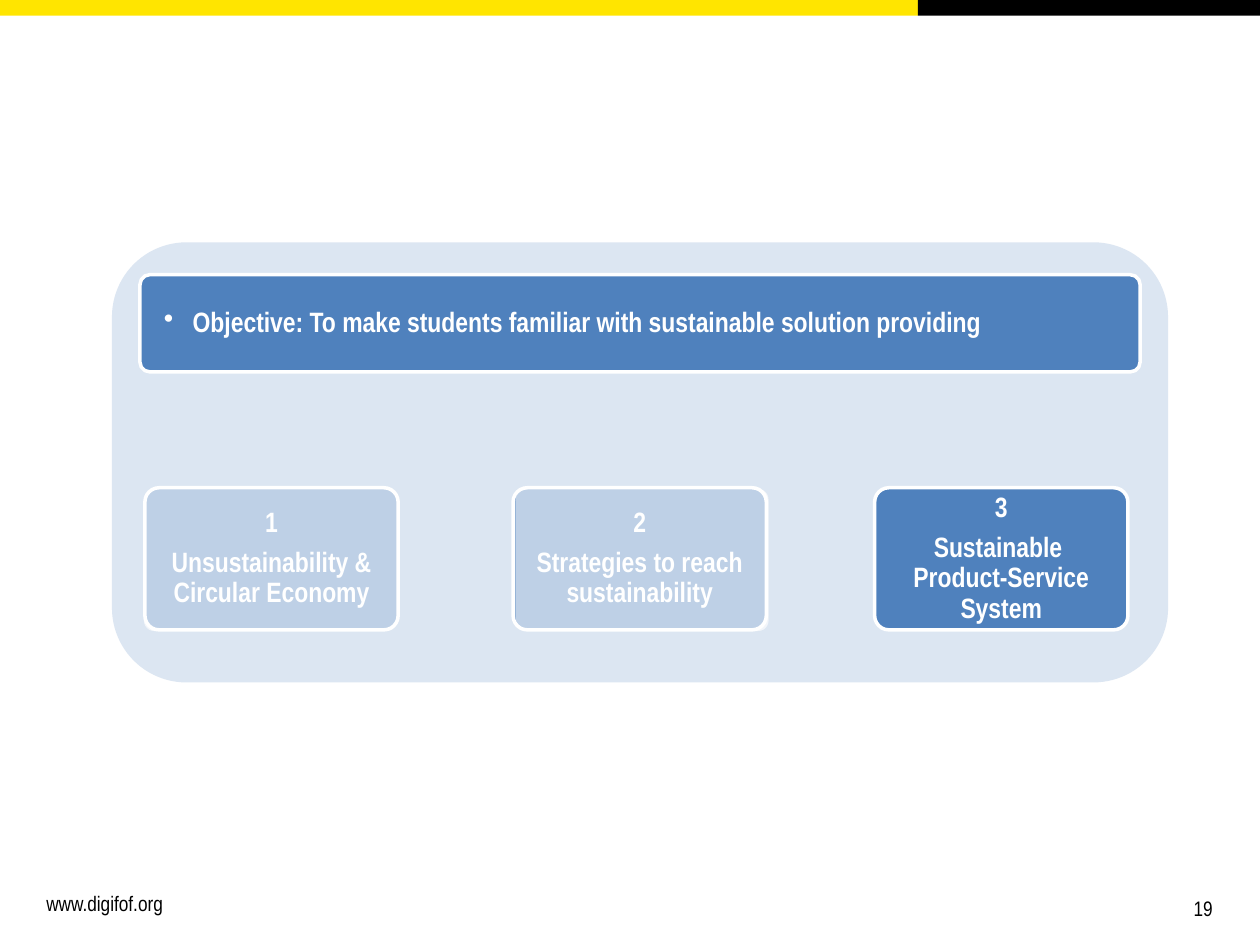
"""Build the course objective slide with its three topic cards."""
from dataclasses import dataclass

from lxml import etree
from pptx import Presentation
from pptx import util as u
from pptx.dml.color import RGBColor
from pptx.enum import shapes, text
from pptx.oxml import ns


@dataclass(frozen=True)
class Theme:
    font: str = "Arial Narrow"
    yellow: str = "FFE500"
    black: str = "000000"
    white: str = "FFFFFF"
    panel: str = "DCE6F2"
    blue: str = "4F81BD"
    body_size: float = 16
    footer_size: float = 12
    outline: float = 2
    veil_opacity: int = 63


class SlideBuilder:
    def __init__(self, slide, theme):
        self.slide = slide
        self.theme = theme

    def block(self, box, fill, line=None, radius=None, opacity=None):
        kinds = shapes.MSO_SHAPE
        kind = kinds.RECTANGLE if radius is None else kinds.ROUNDED_RECTANGLE
        shape = self.slide.shapes.add_shape(kind, *map(u.Pt, box))
        shape.shadow.inherit = False
        if radius is not None:
            shape.adjustments[0] = radius
        shape.fill.solid()
        shape.fill.fore_color.rgb = RGBColor.from_string(fill)
        if opacity is not None:
            color = shape._element.spPr.find(".//" + ns.qn("a:srgbClr"))
            etree.SubElement(color, ns.qn("a:alpha"), val=str(opacity * 1000))
        if line is None:
            shape.line.fill.background()
        else:
            shape.line.color.rgb = RGBColor.from_string(line)
            shape.line.width = u.Pt(self.theme.outline)
        return shape

    def run(self, paragraph, content, size, color, bold=False):
        run = paragraph.add_run()
        run.text = content
        run.font.name = self.theme.font
        run.font.size = u.Pt(size)
        run.font.bold = bold
        run.font.color.rgb = RGBColor.from_string(color)

    def body(self, shape, paragraphs, alignment, side_inset, bullet=False):
        frame = shape.text_frame
        frame.word_wrap = True
        frame.vertical_anchor = text.MSO_ANCHOR.MIDDLE
        frame.margin_left = frame.margin_right = u.Pt(side_inset)
        frame.margin_top = frame.margin_bottom = u.Pt(2)
        for index, lines in enumerate(paragraphs):
            paragraph = frame.add_paragraph() if index else frame.paragraphs[0]
            if bullet:
                self.bullet(paragraph)
            paragraph.alignment = alignment
            paragraph.line_spacing = 0.9
            paragraph.space_after = u.Pt(5.6)
            for number, line in enumerate(lines):
                if number:
                    paragraph.add_line_break()
                self.run(paragraph, line, self.theme.body_size, self.theme.white, True)

    def bullet(self, paragraph):
        properties = paragraph._p.get_or_add_pPr()
        indent = u.Pt(16.5)
        properties.set("marL", str(indent))
        properties.set("indent", str(-indent))
        etree.SubElement(properties, ns.qn("a:buChar"), char="•")

    def footer(self, box, content, alignment):
        frame = self.slide.shapes.add_textbox(*map(u.Pt, box)).text_frame
        frame.word_wrap = True
        frame.vertical_anchor = text.MSO_ANCHOR.BOTTOM
        paragraph = frame.paragraphs[0]
        paragraph.alignment = alignment
        self.run(paragraph, content, self.theme.footer_size, self.theme.black)

    def banner(self, box, content):
        shape = self.block(box, self.theme.blue, self.theme.white, 0.1)
        self.body(shape, [[content]], text.PP_ALIGN.LEFT, 12, bullet=True)

    def card(self, box, number, title_lines):
        shape = self.block(box, self.theme.blue, self.theme.white, 0.1)
        self.body(shape, [[number], title_lines], text.PP_ALIGN.CENTER, 3.5)

    def veil(self, box):
        self.block(box, self.theme.white, radius=0.074, opacity=self.theme.veil_opacity)


def main():
    theme = Theme()
    presentation = Presentation()
    presentation.slide_width, presentation.slide_height = u.Pt(720), u.Pt(540)
    slide = presentation.slides.add_slide(presentation.slide_layouts[6])
    builder = SlideBuilder(slide, theme)

    split, bar_height = 524.5, 9
    builder.block((0, 0, split, bar_height), theme.yellow)
    builder.block((split, 0, 720 - split, bar_height), theme.black)
    builder.footer((19.4, 491, 210, 36), "www.digifof.org", text.PP_ALIGN.LEFT)
    builder.footer((496, 489.6, 204, 40.3), "19", text.PP_ALIGN.RIGHT)

    builder.block((65, 139.5, 601.5, 249.5), theme.panel, theme.panel, 0.1667)
    builder.banner(
        (80, 157, 571.5, 55.5),
        "Objective: To make students familiar with sustainable solution providing",
    )

    card_top, card_width, card_height = 278.7, 144.7, 81.2
    cards = [
        (82.8, ["Unsustainability & Circular Economy"]),
        (293.2, ["Strategies to reach sustainability"]),
        (499.8, ["Sustainable ", "Product-Service System"]),
    ]
    for number, (left, title_lines) in enumerate(cards, 1):
        builder.card((left, card_top, card_width, card_height), str(number), title_lines)
    for left in (294.5, 82.2):
        builder.veil((left, card_top + 0.7, card_width, card_height))

    presentation.save("out.pptx")


if __name__ == "__main__":
    main()
